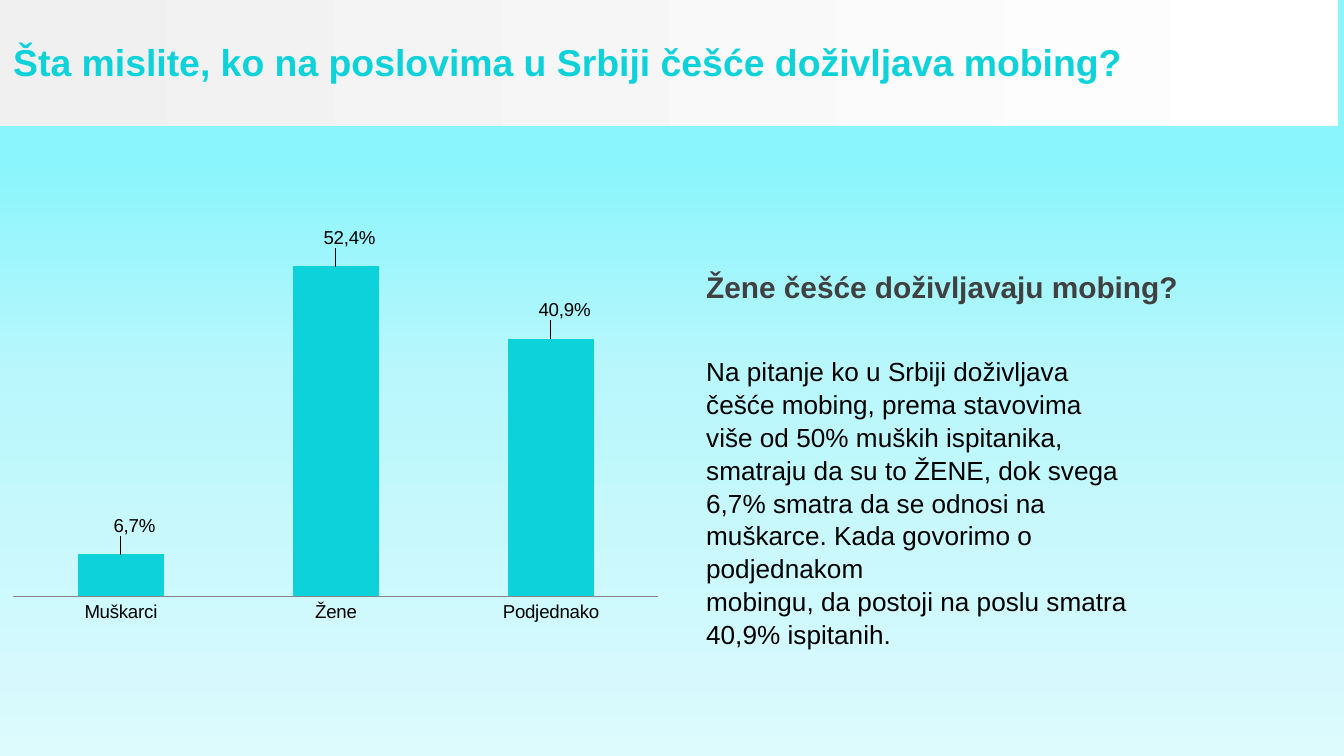
from dataclasses import dataclass

from lxml import etree
from pptx import Presentation
from pptx.chart import data
from pptx.dml import color
from pptx.enum import chart as charts, shapes, text
from pptx.oxml import ns, parse_xml
from pptx.util import Pt

PX = 9525


@dataclass(frozen=True)
class Theme:
    font: str = "Arial"
    accent: str = "0DD2D9"
    heading: str = "404040"
    ink: str = "000000"
    axis: str = "868686"
    band: tuple = ((0, "F0F0F0"), (100, "FFFFFF"))
    backdrop: tuple = ((21, "8AF5FC"), (50, "B9F7FC"), (100, "DDFAFD"))
    title_size: int = 20
    heading_size: int = 16
    body_size: int = 14
    chart_size: int = 10


THEME = Theme()


def px(*lengths):
    return [length * PX for length in lengths]


def rgb(value):
    return color.RGBColor.from_string(value)


def style_font(font, size, ink, bold=False):
    font.name = THEME.font
    font.size = Pt(size)
    font.bold = bold
    font.color.rgb = rgb(ink)


def apply_gradient(fill, owner, stops, angle):
    fill.gradient()
    fill.gradient_angle = angle
    stop_list = next(owner.iter(ns.qn("a:gsLst")))
    for stop in list(stop_list):
        stop_list.remove(stop)
    for percent, value in stops:
        stop = etree.SubElement(stop_list, ns.qn("a:gs"), pos=str(percent * 1000))
        etree.SubElement(stop, ns.qn("a:srgbClr"), val=value)


def add_band(page, bounds):
    band = page.shapes.add_shape(shapes.MSO_SHAPE.RECTANGLE, *px(*bounds))
    band.shadow.inherit = False
    band.line.fill.background()
    apply_gradient(band.fill, band._element, THEME.band, 0)


def add_text(page, bounds, paragraphs, size, ink, bold=False, spacing=1.0,
             anchor=text.MSO_ANCHOR.TOP):
    frame = page.shapes.add_textbox(*px(*bounds)).text_frame
    frame.word_wrap = True
    frame.vertical_anchor = anchor
    frame.text = "\n".join(paragraphs)
    for para in frame.paragraphs:
        para.line_spacing = spacing
        style_font(para.font, size, ink, bold)


def make_layout(target=None, **values):
    fields = {}
    if target:
        fields["layoutTarget"] = target
        fields.update(xMode="edge", yMode="edge")
    fields.update(values)
    body = "".join(f'<c:{name} val="{value}"/>' for name, value in fields.items())
    return parse_xml(
        f'<c:layout {ns.nsdecls("c")}><c:manualLayout>{body}</c:manualLayout></c:layout>'
    )


def place_plot(chart):
    area = chart._chartSpace.chart.plotArea
    for layout in area.findall(ns.qn("c:layout")):
        area.remove(layout)
    area.insert(0, make_layout("inner", x=0.02, y=0.02, w=0.96, h=0.9))


def add_point_label(point, caption, shift):
    label = point.data_label
    label.text_frame.text = caption
    style_font(label.text_frame.paragraphs[0].font, THEME.chart_size, THEME.ink)
    label.position = charts.XL_LABEL_POSITION.OUTSIDE_END
    index = point._element.find(f".//{ns.qn('c:dLbl')}[last()]/{ns.qn('c:idx')}")
    for entry in point._element.iter(ns.qn("c:dLbl")):
        if entry.find(ns.qn("c:layout")) is None:
            index = entry.find(ns.qn("c:idx"))
            index.addnext(make_layout(x=shift, y=-0.03))


def add_column_chart(page, bounds, categories, values, shifts):
    numbers = data.CategoryChartData()
    numbers.categories = categories
    numbers.add_series("Series 1", values)
    chart = page.shapes.add_chart(
        charts.XL_CHART_TYPE.COLUMN_CLUSTERED, *px(*bounds), numbers
    ).chart
    chart.has_legend = False
    chart.has_title = False
    style_font(chart.font, THEME.chart_size, THEME.ink)
    place_plot(chart)

    value_axis = chart.value_axis
    value_axis.visible = False
    value_axis.has_major_gridlines = False
    value_axis.minimum_scale = 0
    value_axis.maximum_scale = 60
    category_axis = chart.category_axis
    category_axis.major_tick_mark = charts.XL_TICK_MARK.NONE
    category_axis.format.line.color.rgb = rgb(THEME.axis)

    plot = chart.plots[0]
    plot.gap_width = 150
    plot.vary_by_categories = False
    series = plot.series[0]
    series.format.fill.solid()
    series.format.fill.fore_color.rgb = rgb(THEME.accent)
    series.data_labels.show_value = True
    for number, (value, shift) in enumerate(zip(values, shifts)):
        caption = f"{value}%".replace(".", ",")
        add_point_label(series.points[number], caption, shift)


def main():
    deck = Presentation()
    deck.slide_width, deck.slide_height = px(960, 540)
    page = deck.slides.add_slide(deck.slide_layouts[6])
    apply_gradient(page.background.fill, page._element, THEME.backdrop, 270)
    add_band(page, (0, 0, 956, 90))
    add_text(page, (495, 248, 323, 191), [
        "Na pitanje ko u Srbiji doživljava",
        "češće mobing, prema stavovima više od 50% muških ispitanika, "
        "smatraju da su to ŽENE, dok svega 6,7% smatra da se odnosi na "
        "muškarce. Kada govorimo o podjednakom",
        "mobingu, da postoji na poslu smatra 40,9% ispitanih.",
    ], THEME.body_size, THEME.ink, spacing=1.05)
    add_text(page, (495, 187, 402, 36), ["Žene češće doživljavaju mobing?"],
             THEME.heading_size, THEME.heading, bold=True)
    add_text(page, (0, 3, 960, 82),
             ["Šta mislite, ko na poslovima u Srbiji češće doživljava mobing?"],
             THEME.title_size, THEME.accent, bold=True,
             anchor=text.MSO_ANCHOR.MIDDLE)
    add_column_chart(page, (0, 150, 480, 300),
                     ["Muškarci", "Žene", "Podjednako"],
                     [6.7, 52.4, 40.9], [0.02, 0.02, 0.02])
    deck.save("out.pptx")


if __name__ == "__main__":
    main()
